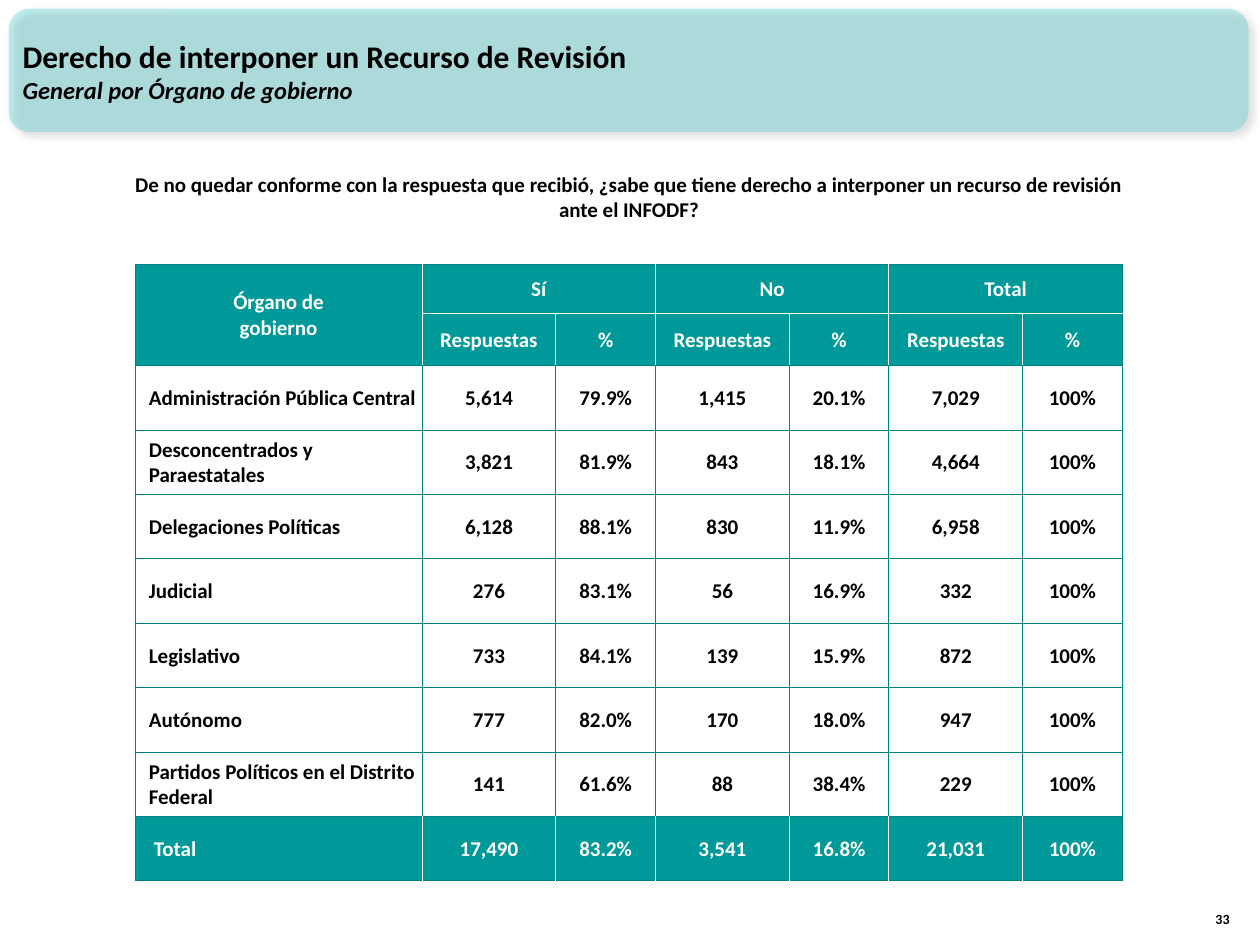
from dataclasses import dataclass

from lxml.etree import SubElement
from pptx import Presentation
from pptx.dml.color import RGBColor
from pptx.enum.shapes import MSO_SHAPE
from pptx.enum.text import MSO_ANCHOR, PP_ALIGN
from pptx.oxml import parse_xml
from pptx.oxml.ns import qn
from pptx.slide import Slide
from pptx.table import Table, _Cell
from pptx.util import Pt

FONT = "Calibri"
BLACK = RGBColor(0x00, 0x00, 0x00)
INK = RGBColor(0x01, 0x02, 0x05)
WHITE = RGBColor(0xFF, 0xFF, 0xFF)
TEAL = RGBColor(0x00, 0x99, 0x99)
DARK_TEAL = RGBColor(0x00, 0x80, 0x80)
AQUA = RGBColor(0x33, 0xCC, 0xCC)

BANNER_SHADOW = (
    '<a:effectLst xmlns:a="http://schemas.openxmlformats.org/drawingml/2006/main">'
    '<a:outerShdw blurRad="50800" dist="38100" dir="2700000" algn="tl" rotWithShape="0">'
    '<a:srgbClr val="000000"><a:alpha val="40000"/></a:srgbClr>'
    "</a:outerShdw></a:effectLst>"
)

COLUMN_WIDTHS = [164] + [76.5, 56.9] * 3
ROW_HEIGHTS = [28, 29.5] + [36.8] * 8
ANSWERS = ["Sí", "No", "Total"]
BODY_ROWS = [
    ["Administración Pública Central", "5,614", "79.9%", "1,415", "20.1%", "7,029", "100%"],
    ["Desconcentrados y Paraestatales", "3,821", "81.9%", "843", "18.1%", "4,664", "100%"],
    ["Delegaciones Políticas", "6,128", "88.1%", "830", "11.9%", "6,958", "100%"],
    ["Judicial", "276", "83.1%", "56", "16.9%", "332", "100%"],
    ["Legislativo", "733", "84.1%", "139", "15.9%", "872", "100%"],
    ["Autónomo", "777", "82.0%", "170", "18.0%", "947", "100%"],
    ["Partidos Políticos en el Distrito Federal", "141", "61.6%", "88", "38.4%", "229", "100%"],
    ["Total", "17,490", "83.2%", "3,541", "16.8%", "21,031", "100%"],
]


@dataclass
class Line:
    text: str
    size: float
    italic: bool = False


@dataclass
class TextBlock:
    left: float
    top: float
    width: float
    height: float
    lines: list[Line]
    anchor: MSO_ANCHOR = MSO_ANCHOR.TOP
    align: PP_ALIGN = PP_ALIGN.LEFT


TEXT_BLOCKS = [
    TextBlock(5.8, 6.5, 660, 67.7,
              [Line("Derecho de interponer un Recurso de Revisión", 18),
               Line("General por Órgano de gobierno", 14, italic=True)],
              anchor=MSO_ANCHOR.MIDDLE),
    TextBlock(64, 94.3, 591, 36,
              [Line("De no quedar conforme con la respuesta que recibió, ¿sabe que tiene "
                    "derecho a interponer un recurso de revisión ante el INFODF?", 12)],
              align=PP_ALIGN.CENTER),
    TextBlock(681, 504.7, 28.8, 28.8, [Line("33", 8)],
              anchor=MSO_ANCHOR.BOTTOM, align=PP_ALIGN.RIGHT),
]


def add_banner(slide: Slide) -> None:
    banner = slide.shapes.add_shape(
        MSO_SHAPE.ROUNDED_RECTANGLE, Pt(5), Pt(5), Pt(708.5), Pt(70.5))
    banner.fill.solid()
    banner.fill.fore_color.rgb = AQUA
    banner.line.fill.background()
    properties = banner.element.spPr
    color = properties.find(qn("a:solidFill")).find(qn("a:srgbClr"))
    SubElement(color, qn("a:alpha"), val="30000")
    properties.append(parse_xml(BANNER_SHADOW))


def add_text_block(slide: Slide, block: TextBlock) -> None:
    box = slide.shapes.add_textbox(
        Pt(block.left), Pt(block.top), Pt(block.width), Pt(block.height))
    frame = box.text_frame
    frame.word_wrap = True
    frame.vertical_anchor = block.anchor
    frame.text = "\n".join(line.text for line in block.lines)
    for para, line in zip(frame.paragraphs, block.lines):
        para.alignment = block.align
        para.font.name = FONT
        para.font.size = Pt(line.size)
        para.font.bold = True
        para.font.italic = line.italic
        para.font.color.rgb = BLACK


def set_borders(cell: _Cell, colors: dict[str, RGBColor]) -> None:
    """Draw cell edges; they must precede the fill in the cell properties."""
    properties = cell._tc.get_or_add_tcPr()
    for edge, color in colors.items():
        line = SubElement(properties, qn(f"a:{edge}"), w=str(Pt(0.5)))
        fill = SubElement(line, qn("a:solidFill"))
        SubElement(fill, qn("a:srgbClr"), val=str(color))


def style_cell(cell: _Cell, row: int, column: int) -> None:
    header = row < 2
    shaded = header or row == len(ROW_HEIGHTS) - 1
    end_column = column + (cell.span_width if cell.is_merge_origin else 1)
    inner = WHITE if shaded else DARK_TEAL
    split = WHITE if column > 0 else DARK_TEAL
    set_borders(cell, {
        "lnL": inner if column > 0 else DARK_TEAL,
        "lnR": inner if end_column < len(COLUMN_WIDTHS) else DARK_TEAL,
        "lnT": split if row == 1 else DARK_TEAL,
        "lnB": split if row == 0 else DARK_TEAL,
    })
    if shaded:
        cell.fill.solid()
        cell.fill.fore_color.rgb = TEAL
    else:
        cell.fill.background()

    cell.vertical_anchor = MSO_ANCHOR.MIDDLE
    cell.margin_left = cell.margin_right = cell.margin_top = Pt(0.7)
    cell.margin_bottom = Pt(0)
    row_label = column == 0 and not header
    for para in cell.text_frame.paragraphs:
        if row_label:
            properties = para._p.get_or_add_pPr()
            properties.set("marL", str(Pt(10 if shaded else 7.2)))
        para.alignment = PP_ALIGN.LEFT if row_label else PP_ALIGN.CENTER
        para.font.name = FONT
        para.font.size = Pt(12)
        para.font.bold = True
        para.font.color.rgb = WHITE if shaded else BLACK if row_label else INK


def merge_headers(table: Table) -> None:
    table.cell(0, 0).merge(table.cell(1, 0))
    for column in range(1, len(COLUMN_WIDTHS), 2):
        table.cell(0, column).merge(table.cell(0, column + 1))


def add_answers_table(slide: Slide) -> None:
    table = slide.shapes.add_table(
        len(ROW_HEIGHTS), len(COLUMN_WIDTHS), Pt(77.2), Pt(151),
        Pt(sum(COLUMN_WIDTHS)), Pt(sum(ROW_HEIGHTS))).table
    table.first_row = table.horz_banding = False
    for column, width in zip(table.columns, COLUMN_WIDTHS):
        column.width = Pt(width)
    for row, height in zip(table.rows, ROW_HEIGHTS):
        row.height = Pt(height)
    merge_headers(table)

    answer_row = ["Órgano de\ngobierno"]
    for answer in ANSWERS:
        answer_row += [answer, ""]
    measure_row = [""] + ["Respuestas", "%"] * len(ANSWERS)
    for row, texts in enumerate([answer_row, measure_row, *BODY_ROWS]):
        for column, text in enumerate(texts):
            cell = table.cell(row, column)
            cell.text = text
            style_cell(cell, row, column)


def main() -> None:
    deck = Presentation()
    deck.slide_width, deck.slide_height = Pt(720), Pt(540)
    slide = deck.slides.add_slide(deck.slide_layouts[6])
    add_banner(slide)
    add_answers_table(slide)
    for block in TEXT_BLOCKS:
        add_text_block(slide, block)
    deck.save("out.pptx")


if __name__ == "__main__":
    main()
